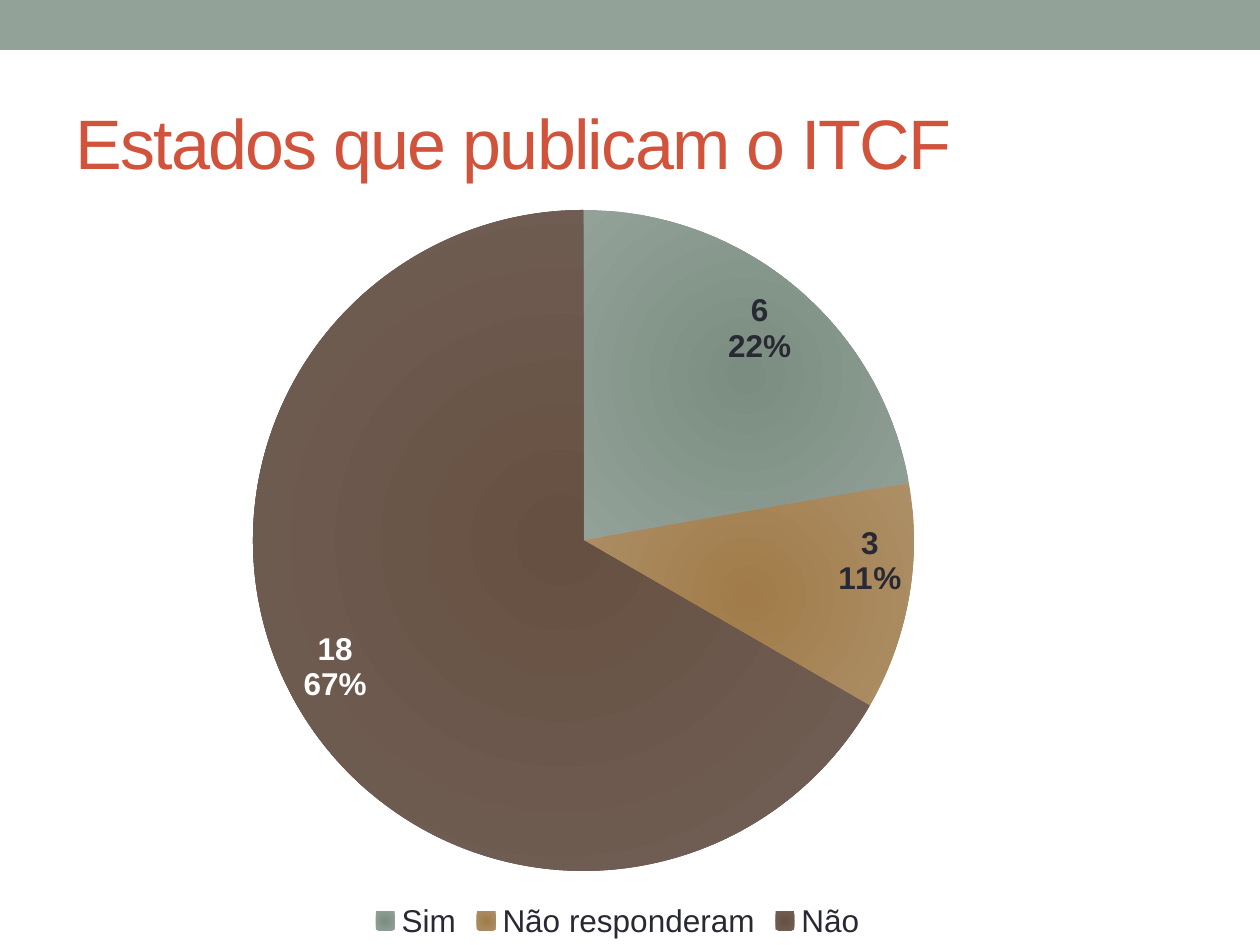
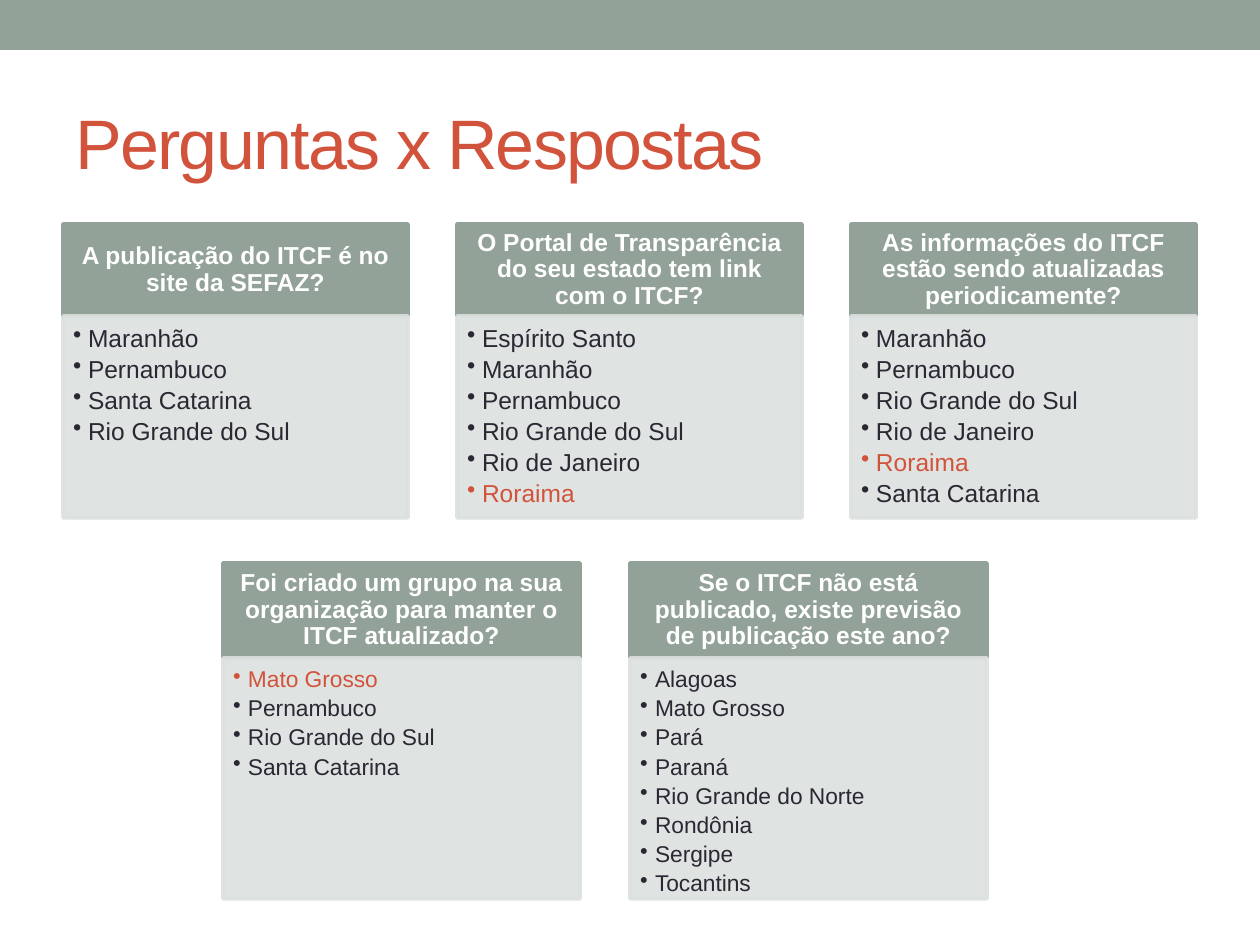
from dataclasses import dataclass
from lxml.etree import SubElement
from pptx import Presentation
from pptx.chart.data import CategoryChartData
from pptx.dml.color import RGBColor
from pptx.enum.chart import XL_CHART_TYPE, XL_LABEL_POSITION, XL_LEGEND_POSITION
from pptx.enum.shapes import MSO_SHAPE
from pptx.enum.text import MSO_ANCHOR, PP_ALIGN
from pptx.oxml.ns import qn
from pptx.util import Emu, Pt


@dataclass(frozen=True)
class Theme:
    font: str = "Arial"
    sage: str = "93A299"
    rust: str = "D2533C"
    ink: str = "292934"
    mist: str = "DCE0DE"
    white: str = "FFFFFF"
    slices: tuple = (("7A8D80", "93A299"), ("A17C4A", "AD8F67"), ("665042", "726056"))
    title: int = 40
    chart: int = 18
    head: int = 14


SCALE = 914400 / 126
WIDE, HIGH = 1260, 945


def px(size):
    return Emu(round(size * SCALE))


def put(item, **values):
    for name, value in values.items():
        setattr(item, name, value)


def add(parent, tag, **values):
    return SubElement(parent, qn(tag), {k: str(v) for k, v in values.items()})


class Deck:
    def __init__(self, theme):
        self.theme = theme
        self.show = Presentation()
        put(self.show, slide_width=px(WIDE), slide_height=px(HIGH))
        self.slide = None

    def start(self, title):
        self.slide = self.show.slides.add_slide(self.show.slide_layouts[6])
        self.block(0, 0, WIDE, 50, self.theme.sage).line.fill.background()
        box = self.slide.shapes.add_textbox(*map(px, (63, 73, 1134, 136)))
        put(box.text_frame, word_wrap=True, vertical_anchor=MSO_ANCHOR.MIDDLE)
        run = self.say(box.text_frame.paragraphs[0], title, self.theme.title, self.theme.rust)
        run.font._element.set("spc", "-100")

    def style(self, font, size, color, bold=False):
        put(font, name=self.theme.font, size=Pt(size), bold=bold)
        font.color.rgb = RGBColor.from_string(color)

    def say(self, line, text, size, color, bold=False):
        run = line.add_run()
        run.text = text
        self.style(run.font, size, color, bold)
        return run

    def block(self, x, y, w, h, color, alpha=None):
        shape = self.slide.shapes.add_shape(MSO_SHAPE.RECTANGLE, *map(px, (x, y, w, h)))
        shape.shadow.inherit = False
        shape.fill.solid()
        shape.line.width = Pt(2.08)
        for part in (shape.fill.fore_color, shape.line.color):
            part.rgb = RGBColor.from_string(color)
        if alpha:
            for node in shape.element.spPr.iter(qn("a:srgbClr")):
                add(node, "a:alpha", val=alpha * 1000)
        return shape

    def frame(self, shape, sides, anchor):
        names = ("margin_left", "margin_top", "margin_right", "margin_bottom")
        put(shape.text_frame, word_wrap=True, vertical_anchor=anchor, **dict(zip(names, map(px, sides))))
        return shape.text_frame

    def card(self, x, y, w, head, body, size, ask, states, marked):
        top = self.block(x, y, w, head, self.theme.sage)
        line = self.frame(top, (14, 8, 14, 8), MSO_ANCHOR.MIDDLE).paragraphs[0]
        put(line, alignment=PP_ALIGN.CENTER, line_spacing=0.9)
        self.say(line, ask, self.theme.head, self.theme.white, True)
        base = self.block(x, y + head, w, body, self.theme.mist, 90)
        text = self.frame(base, (10, 10, 14, 15), MSO_ANCHOR.TOP)
        for i, state in enumerate(states):
            line = text.add_paragraph() if i else text.paragraphs[0]
            put(line, alignment=PP_ALIGN.LEFT, line_spacing=0.9, space_after=Pt(2.6))
            props = line._p.get_or_add_pPr()
            props.set("marL", str(px(15)))
            props.set("indent", str(-px(15)))
            add(props, "a:buChar", char="•")
            color = self.theme.rust if state == marked else self.theme.ink
            self.say(line, state, size, color)

    def pie(self, x, y, w, h, inner, values):
        data = CategoryChartData()
        data.categories = list(values)
        data.add_series("Series 1", list(values.values()))
        chart = self.slide.shapes.add_chart(XL_CHART_TYPE.PIE, *map(px, (x, y, w, h)), data).chart
        self.style(chart.font, self.theme.chart, self.theme.ink)
        put(chart, has_title=False, has_legend=True)
        put(chart.legend, position=XL_LEGEND_POSITION.BOTTOM, include_in_layout=False)
        plot = chart.plots[0]
        plot.vary_by_categories = True
        ring = plot.series[0]
        labels = ring.data_labels
        put(labels, show_value=True, show_percentage=True, position=XL_LABEL_POSITION.INSIDE_END)
        self.style(labels.font, self.theme.chart, self.theme.ink, True)
        for i, colors in enumerate(self.theme.slices):
            self.glow(ring.points[i].format.fill, colors)
        last = ring.points[len(values) - 1].data_label
        self.style(last.font, self.theme.chart, self.theme.white, True)
        last.position = XL_LABEL_POSITION.INSIDE_END
        self.split(chart.element)
        self.place(chart.element, (x, y, w, h), inner)

    def glow(self, fill, colors):
        fill.gradient()
        for stop, color in zip(fill.gradient_stops, colors):
            stop.color.rgb = RGBColor.from_string(color)
        grad = fill._xPr.find(qn("a:gradFill"))
        grad.remove(grad.find(qn("a:lin")))
        way = add(grad, "a:path", **{"path": "circle"})
        add(way, "a:fillToRect", l=50000, t=50000, r=50000, b=50000)

    def split(self, root):
        for node in root.iter(qn("c:showPercent")):
            node.set("val", "1")
        for node in list(root.iter(qn("c:showBubbleSize"))):
            mark = add(node.getparent(), "c:separator")
            mark.text = "\n"
            node.addnext(mark)

    def place(self, root, outer, inner):
        area = next(root.iter(qn("c:plotArea")))
        for old in area.findall(qn("c:layout")):
            area.remove(old)
        layout = add(area, "c:layout")
        area.insert(0, layout)
        spot = add(layout, "c:manualLayout")
        x, y, w, h = outer
        left, top, wide, high = inner
        add(spot, "c:layoutTarget", val="inner")
        add(spot, "c:xMode", val="edge")
        add(spot, "c:yMode", val="edge")
        parts = {"x": (left - x) / w, "y": (top - y) / h, "w": wide / w, "h": high / h}
        for name, part in parts.items():
            add(spot, f"c:{name}", val=part)


UPPER = (
    ("A publicação do ITCF é no site da SEFAZ?",
     ("Maranhão", "Pernambuco", "Santa Catarina", "Rio Grande do Sul"), None),
    ("O Portal de Transparência do seu estado tem link com o ITCF?",
     ("Espírito Santo", "Maranhão", "Pernambuco", "Rio Grande do Sul", "Rio de Janeiro", "Roraima"),
     "Roraima"),
    ("As informações do ITCF estão sendo atualizadas periodicamente?",
     ("Maranhão", "Pernambuco", "Rio Grande do Sul", "Rio de Janeiro", "Roraima", "Santa Catarina"),
     "Roraima"),
)
LOWER = (
    ("Foi criado um grupo na sua organização para manter o ITCF atualizado?",
     ("Mato Grosso", "Pernambuco", "Rio Grande do Sul", "Santa Catarina"), "Mato Grosso"),
    ("Se o ITCF não está publicado, existe previsão de publicação este ano?",
     ("Alagoas", "Mato Grosso", "Pará", "Paraná", "Rio Grande do Norte", "Rondônia", "Sergipe",
      "Tocantins"), None),
)
ROWS = (
    (UPPER, 63, 394, dict(y=224, w=345, head=92, body=202, size=14)),
    (LOWER, 223, 407, dict(y=563, w=357, head=95, body=241, size=13)),
)


def main():
    deck = Deck(Theme())
    deck.start("Estados que publicam o ITCF")
    votes = {"Sim": 6, "Não responderam": 3, "Não": 18}
    deck.pie(0, 193, 1235, 752, (253, 210, 661, 661), votes)
    deck.start("Perguntas x Respostas")
    for cards, left, step, form in ROWS:
        for i, (ask, states, marked) in enumerate(cards):
            deck.card(left + i * step, ask=ask, states=states, marked=marked, **form)
    deck.show.save("out.pptx")


if __name__ == "__main__":
    main()
